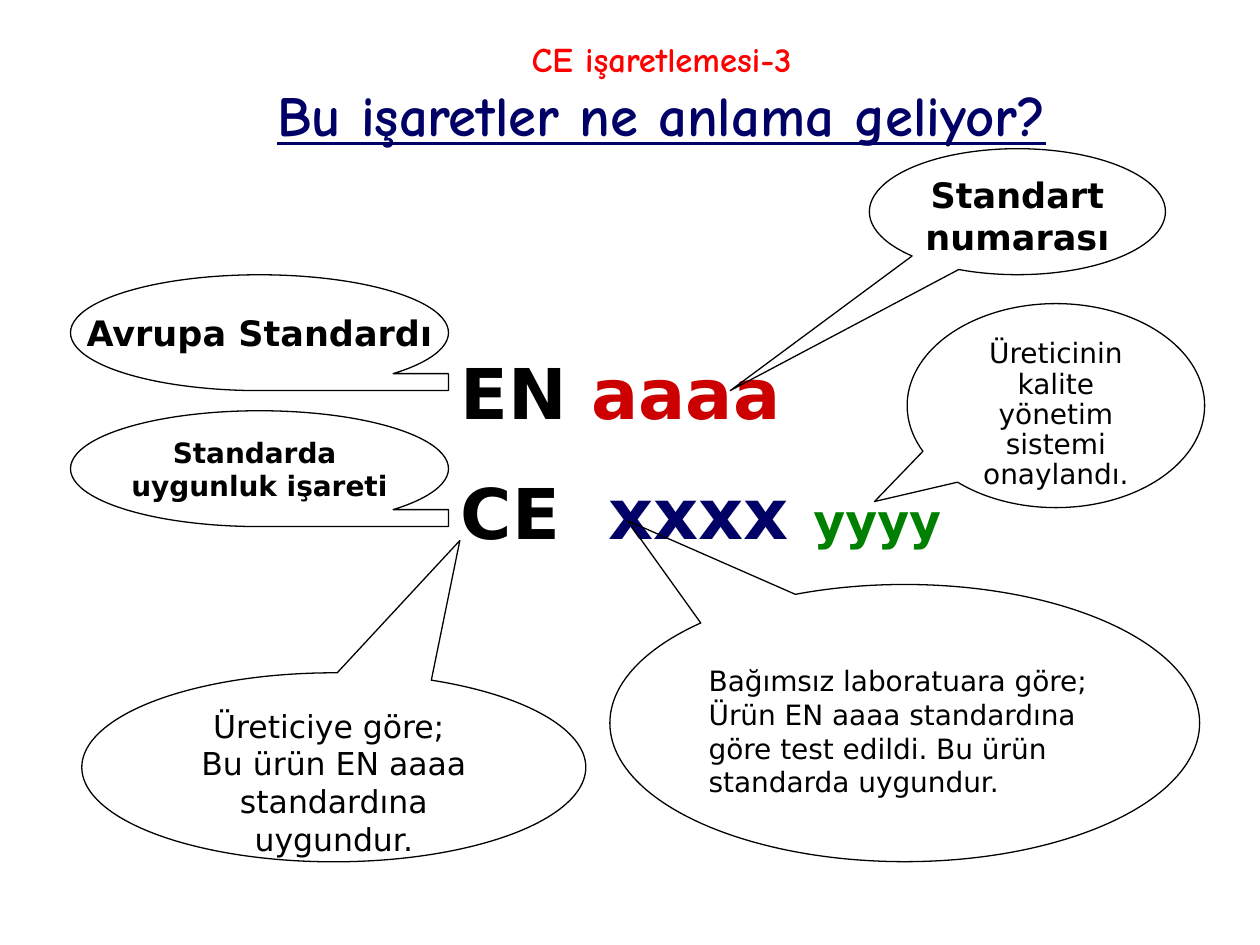
from pptx import Presentation
from pptx.dml.color import RGBColor
from pptx.enum.shapes import MSO_SHAPE
from pptx.enum.text import MSO_ANCHOR, PP_ALIGN
from pptx.util import Pt

BLACK = RGBColor(0x00, 0x00, 0x00)
RED = RGBColor(0xFF, 0x00, 0x00)
DARK_RED = RGBColor(0xCC, 0x00, 0x00)
NAVY = RGBColor(0x00, 0x00, 0x66)
GREEN = RGBColor(0x00, 0x80, 0x00)
BODY_FONT = "DejaVu Sans"
TITLE_FONT = "Comic Neue"
BALLOON = MSO_SHAPE.OVAL_CALLOUT
TAPE = MSO_SHAPE.FLOWCHART_SEQUENTIAL_ACCESS_STORAGE
TOP, MIDDLE = MSO_ANCHOR.TOP, MSO_ANCHOR.MIDDLE
LEFT, CENTER = PP_ALIGN.LEFT, PP_ALIGN.CENTER


def add_text(paragraph, text, size=16, color=BLACK, bold=False, underline=False, font=BODY_FONT):
    """Append one formatted run to a paragraph."""
    run = paragraph.add_run()
    run.text = text
    run.font.name = font
    run.font.size = Pt(size)
    run.font.bold = bold
    run.font.underline = underline
    run.font.color.rgb = color


def place(shape, box):
    """Move and size a shape to a box of left, top, width and height in points."""
    shape.left, shape.top, shape.width, shape.height = map(Pt, box)


def add_title(slide, box):
    """Fill the title placeholder with its small heading and its question."""
    title = slide.shapes.title
    place(title, box)
    frame = title.text_frame
    frame.word_wrap = True
    frame.vertical_anchor = TOP
    frame.margin_top = frame.margin_bottom = 0
    paragraph = frame.paragraphs[0]
    paragraph.alignment = CENTER
    add_text(paragraph, "CE işaretlemesi-3", size=19.8, color=RED, bold=True, font=TITLE_FONT)
    paragraph.add_line_break()
    add_text(paragraph, "Bu işaretler ne anlama geliyor?", size=32.4, color=NAVY,
             bold=True, underline=True, font=TITLE_FONT)


def add_marks(slide, box):
    """Write the two rows of coloured marks."""
    rows = [
        [("EN ", BLACK, 40), ("aaaa", DARK_RED, 40)],
        [("CE  ", BLACK, 40), ("xxxx ", NAVY, 40), ("yyyy", GREEN, 28)],
    ]
    frame = slide.shapes.add_textbox(*map(Pt, box)).text_frame
    frame.word_wrap = True
    frame.margin_top = Pt(6.5)
    for index, row in enumerate(rows):
        paragraph = frame.add_paragraph() if index else frame.paragraphs[0]
        paragraph.space_before = Pt(21 * index)
        for text, color, size in row:
            add_text(paragraph, text, size=size, color=color, bold=True)


def add_bubble(slide, box, lines, kind=BALLOON, tail=(), alignment=CENTER,
               line_spacing=1, margin_top=3.6, **text_format):
    """Draw an outlined bubble with its text, and its tail if it has one."""
    shape = slide.shapes.add_shape(kind, *map(Pt, box))
    shape.shadow.inherit = False
    shape.fill.background()
    shape.line.color.rgb = BLACK
    shape.line.width = Pt(0.75)
    for index, offset in enumerate(tail):
        shape.adjustments[index] = offset
    frame = shape.text_frame
    frame.word_wrap = kind == BALLOON
    frame.vertical_anchor = TOP if kind == BALLOON else MIDDLE
    frame.margin_top = Pt(margin_top)
    for index, line in enumerate(lines):
        paragraph = frame.add_paragraph() if index else frame.paragraphs[0]
        paragraph.alignment = alignment
        paragraph.line_spacing = line_spacing
        add_text(paragraph, line, **text_format)


def add_bubbles(slide):
    """Place the explanations around the marks."""
    add_bubble(slide, (518.4, 173.5, 170, 116.6), ["Üreticinin kalite yönetim sistemi onaylandı."],
               tail=(-0.61, 0.47), line_spacing=0.9)
    add_bubble(slide, (348.5, 334, 337, 158.4),
               ["Bağımsız laboratuara göre;",
                "Ürün EN aaaa standardına göre test edildi. Bu ürün standarda uygundur."],
               tail=(-0.47, -0.73), alignment=LEFT, margin_top=22.2)
    add_bubble(slide, (496.8, 85, 169.2, 72), ["Standart numarası"],
               tail=(-0.97, 1.42), size=20, bold=True)
    add_bubble(slide, (46.8, 384.5, 288, 108),
               ["Üreticiye göre; ", "Bu ürün EN aaaa standardına uygundur."],
               tail=(0.25, -1.2), size=18)
    tapes = [(157, ["Avrupa Standardı"], 20), (234.7, ["Standarda ", "uygunluk işareti"], 16)]
    for top, lines, size in tapes:
        add_bubble(slide, (40.3, top, 216, 66.2), lines, kind=TAPE, size=size, bold=True)


def main():
    """Build the slide and save it."""
    presentation = Presentation()
    presentation.slide_width, presentation.slide_height = Pt(720), Pt(540)
    slide = presentation.slides.add_slide(presentation.slide_layouts[5])
    add_title(slide, (54, 21.6, 648, 78.5))
    add_marks(slide, (256.3, 193, 324.7, 127.4))
    add_bubbles(slide)
    presentation.save("out.pptx")


if __name__ == "__main__":
    main()
